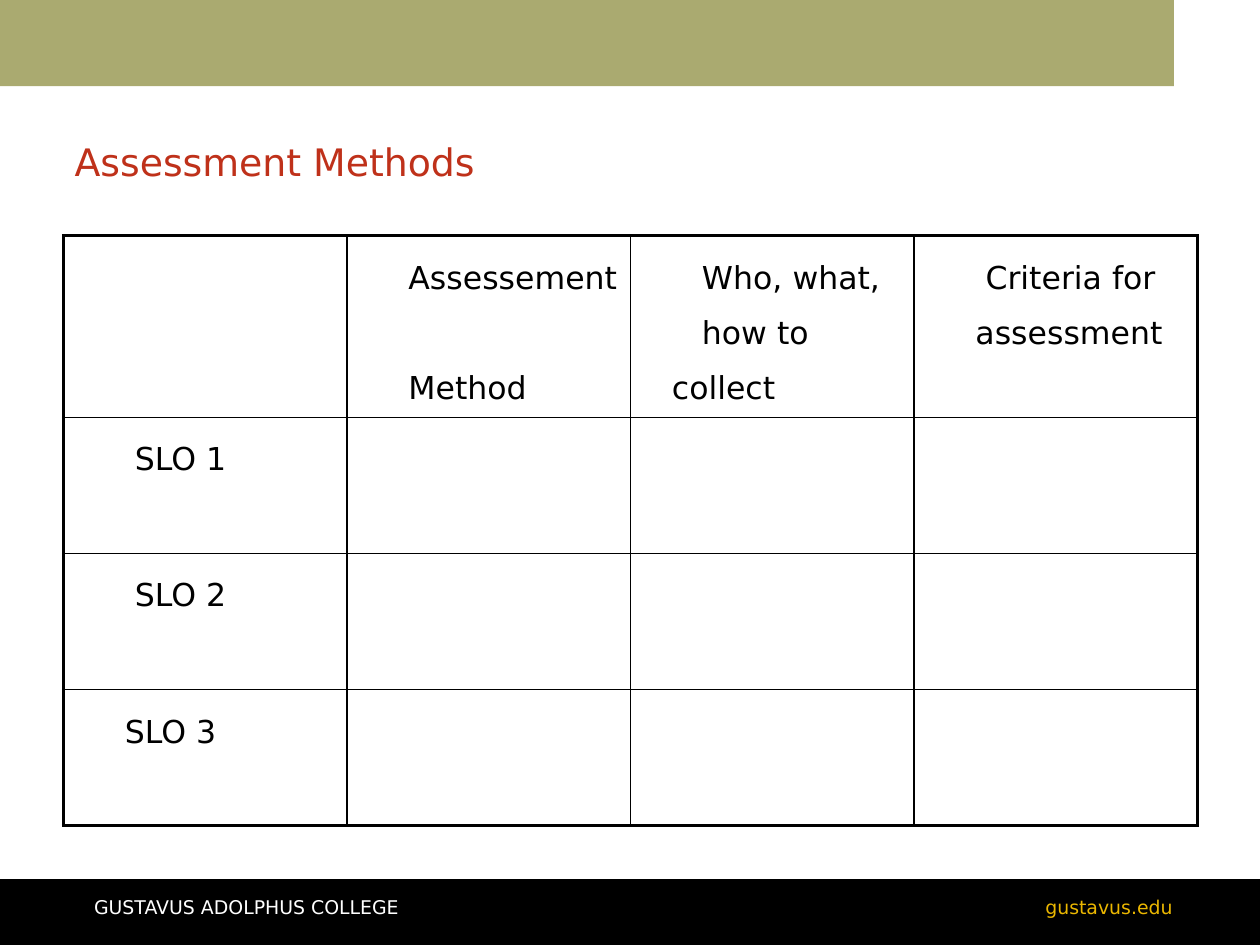
from dataclasses import dataclass

from lxml.etree import SubElement
from pptx import Presentation
from pptx.dml.color import RGBColor
from pptx.enum.shapes import MSO_SHAPE
from pptx.enum.text import MSO_ANCHOR, PP_ALIGN
from pptx.oxml.ns import qn
from pptx.util import Inches, Pt

FONT = "DejaVu Sans"
BLACK = "000000"
SPACE = 0.0883  # width in inches of a space at 20 pt


@dataclass
class Band:
    left: float
    top: float
    width: float
    height: float
    fill: str


@dataclass
class Label:
    text: str
    left: float
    top: float
    width: float
    height: float
    size: float
    color: str
    align: PP_ALIGN = PP_ALIGN.LEFT
    anchor: MSO_ANCHOR = MSO_ANCHOR.TOP
    inset: tuple[float, float] = (0, 0)
    line_spacing: float = 0.9


@dataclass
class CellLine:
    text: str
    first_indent: int  # in spaces, as is the next
    wrapped_indent: int = 0
    space_before: float = 0


BANDS = [
    Band(0, 0, 10.35, 0.76, "AAAA70"),
    Band(0, 7.75, 11.11, 0.58, BLACK),
]
LABELS = [
    Label("GUSTAVUS ADOLPHUS COLLEGE", 0.83, 7.92, 5, 0.26, 12, "FFFFFF"),
    Label("gustavus.edu", 5.42, 7.92, 4.92, 0.26, 12, "EBB700", PP_ALIGN.RIGHT),
    Label("Assessment Methods", 0.56, 0.92, 10, 0.75, 24, "BF311A",
          anchor=MSO_ANCHOR.BOTTOM, inset=(0.1, 0.05), line_spacing=1),
]
COLUMN_WIDTHS = [2.5] * 4
ROW_HEIGHTS = [1.55] + [1.2] * 3
CELL_LINES = {
    (0, 1): [CellLine("Assessement", 5), CellLine("Method", 5, space_before=35)],
    (0, 2): [CellLine("Who, what,", 6), CellLine("how to collect", 6, 3)],
    (0, 3): [CellLine("Criteria for", 6), CellLine("assessment", 5)],
    (1, 0): [CellLine("SLO 1", 6)],
    (2, 0): [CellLine("SLO 2", 6)],
    (3, 0): [CellLine("SLO 3", 5)],
}


def rgb(color: str) -> RGBColor:
    return RGBColor.from_string(color)


def set_font(para, size: float, color: str) -> None:
    para.font.name = FONT
    para.font.size = Pt(size)
    para.font.color.rgb = rgb(color)


def add_band(page, band: Band) -> None:
    box = page.shapes.add_shape(
        MSO_SHAPE.RECTANGLE, Inches(band.left), Inches(band.top),
        Inches(band.width), Inches(band.height))
    box.shadow.inherit = False
    box.fill.solid()
    box.fill.fore_color.rgb = rgb(band.fill)
    box.line.fill.background()


def add_label(page, label: Label) -> None:
    box = page.shapes.add_textbox(
        Inches(label.left), Inches(label.top),
        Inches(label.width), Inches(label.height))
    frame = box.text_frame
    frame.word_wrap = True
    frame.vertical_anchor = label.anchor
    side, end = label.inset
    frame.margin_left = frame.margin_right = Inches(side)
    frame.margin_top = frame.margin_bottom = Inches(end)
    para = frame.paragraphs[0]
    para.text = label.text
    para.alignment = label.align
    para.line_spacing = label.line_spacing
    set_font(para, label.size, label.color)


def set_borders(cell, row: int, column: int) -> None:
    """Draw thin lines inside the table and thick ones around it."""
    outer = {
        "a:lnL": column == 0,
        "a:lnR": column == len(COLUMN_WIDTHS) - 1,
        "a:lnT": row == 0,
        "a:lnB": row == len(ROW_HEIGHTS) - 1,
    }
    properties = cell._tc.get_or_add_tcPr()
    for tag, is_outer in outer.items():
        line = SubElement(properties, qn(tag), w=str(Pt(2.25 if is_outer else 1)))
        fill = SubElement(line, qn("a:solidFill"))
        SubElement(fill, qn("a:srgbClr"), val=BLACK)


def write_cell(cell, lines: list[CellLine]) -> None:
    frame = cell.text_frame
    for index, line in enumerate(lines):
        para = frame.add_paragraph() if index else frame.paragraphs[0]
        para.text = line.text
        para.line_spacing = 1.5
        if line.space_before:
            para.space_before = Pt(line.space_before)
        properties = para._p.get_or_add_pPr()
        extra = line.first_indent - line.wrapped_indent
        properties.set("marL", str(Inches(line.wrapped_indent * SPACE)))
        properties.set("indent", str(Inches(extra * SPACE)))
        set_font(para, 20, BLACK)


def add_methods_table(page) -> None:
    table = page.shapes.add_table(
        len(ROW_HEIGHTS), len(COLUMN_WIDTHS), Inches(0.56), Inches(2.08),
        Inches(sum(COLUMN_WIDTHS)), Inches(sum(ROW_HEIGHTS))).table
    table.first_row = table.horz_banding = False
    for column, width in enumerate(COLUMN_WIDTHS):
        table.columns[column].width = Inches(width)
    for row, height in enumerate(ROW_HEIGHTS):
        table.rows[row].height = Inches(height)
        for column in range(len(COLUMN_WIDTHS)):
            cell = table.cell(row, column)
            set_borders(cell, row, column)
            cell.fill.background()
            write_cell(cell, CELL_LINES.get((row, column), []))


def main() -> None:
    deck = Presentation()
    deck.slide_width, deck.slide_height = Inches(11.11), Inches(8.33)
    page = deck.slides.add_slide(deck.slide_layouts[6])
    for band in BANDS:
        add_band(page, band)
    for label in LABELS:
        add_label(page, label)
    add_methods_table(page)
    deck.save("out.pptx")


if __name__ == "__main__":
    main()
